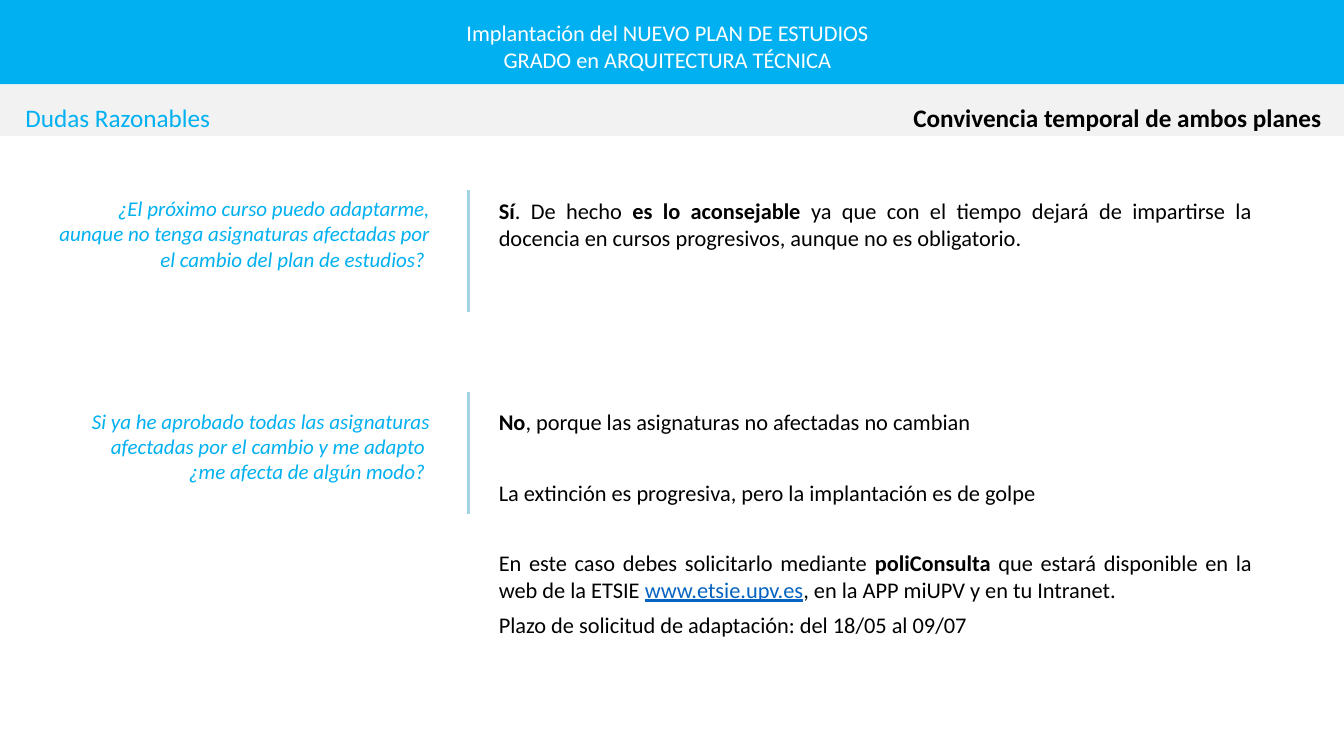
"""Build the slide on the period when both study plans run side by side."""
from dataclasses import dataclass

from lxml.etree import SubElement
from pptx import Presentation
from pptx.dml.color import RGBColor as Rgb
from pptx.enum.shapes import MSO_CONNECTOR as Connector, MSO_SHAPE as Preset
from pptx.enum.text import MSO_ANCHOR as Anchor, MSO_AUTO_SIZE as AutoSize, PP_ALIGN as Align
from pptx.oxml.ns import qn
from pptx.util import Cm, Pt


@dataclass(frozen=True)
class Theme:
    font: str = "Calibri"
    blue: Rgb = Rgb(0x00, 0xB0, 0xF0)
    pale_blue: Rgb = Rgb(0xA4, 0xD3, 0xE6)
    grey: Rgb = Rgb(0xF2, 0xF2, 0xF2)
    link: Rgb = Rgb(0x05, 0x63, 0xC1)
    black: Rgb = Rgb(0x00, 0x00, 0x00)
    white: Rgb = Rgb(0xFF, 0xFF, 0xFF)
    heading: Pt = Pt(18)
    text: Pt = Pt(16)
    question: Pt = Pt(15)


theme = Theme()


def place(shape, left, top, width, height, inset):
    """Move a text shape and give its frame fixed margins, in centimetres."""
    for name, value in dict(left=left, top=top, width=width, height=height).items():
        setattr(shape, name, Cm(value))
    frame_format = dict(
        word_wrap=True, auto_size=AutoSize.NONE, vertical_anchor=Anchor.TOP,
        margin_left=Cm(inset), margin_right=Cm(inset),
        margin_top=Cm(0.13), margin_bottom=Cm(0.13),
    )
    for name, value in frame_format.items():
        setattr(shape.text_frame, name, value)


def write(shape, paragraphs, align, size, color, **style):
    """Write (space after, runs) paragraphs, each run being (text, format)."""
    frame = shape.text_frame
    for number, (space_after, runs) in enumerate(paragraphs):
        paragraph = frame.add_paragraph() if number else frame.paragraphs[0]
        properties = paragraph._p.get_or_add_pPr()
        properties.set("marL", "0")
        properties.set("indent", "0")
        SubElement(properties, qn("a:buNone"))
        layout = dict(alignment=align, space_before=Pt(0), space_after=Pt(space_after))
        for name, value in layout.items():
            setattr(paragraph, name, value)
        for text, emphasis in runs:
            run = paragraph.add_run()
            run.text = text
            run_format = dict(name=theme.font, size=size, bold=False) | style | emphasis
            run.font.color.rgb = run_format.pop("color", color)
            for name, value in run_format.items():
                setattr(run.font, name, value)


presentation = Presentation()
presentation.slide_width = Cm(33.87)
presentation.slide_height = Cm(19.05)
slide = presentation.slides.add_slide(presentation.slide_layouts[4])
shapes = slide.shapes
holders = slide.placeholders

bands = [(0, 2.13, theme.blue), (2.13, 1.3, theme.grey)]
for depth, (top, height, color) in enumerate(bands, start=2):
    band = shapes.add_shape(Preset.RECTANGLE, 0, Cm(top), presentation.slide_width, Cm(height))
    band.shadow.inherit = False
    band.fill.solid()
    band.fill.fore_color.rgb = color
    band.line.fill.background()
    band.element.getparent().insert(depth, band.element)

topic = shapes.title
place(topic, 16.64, 2.46, 16.94, 1.02, 0.13)
write(topic, [(0, [("Convivencia temporal de ambos planes ", {})])],
      Align.RIGHT, theme.heading, theme.black, bold=True)

section = shapes.add_textbox(0, 0, 0, 0)
place(section, 0.51, 2.46, 6.68, 1.02, 0.13)
write(section, [(0, [("Dudas Razonables", {})])], Align.LEFT, theme.heading, theme.blue)

programme = shapes.add_textbox(0, 0, 0, 0)
place(programme, 5.99, 0.36, 21.79, 1.63, 0.13)
write(programme, [
    (0, [("Implantación del NUEVO PLAN DE ESTUDIOS ", {})]),
    (0, [("GRADO en ARQUITECTURA TÉCNICA ", {})]),
], Align.CENTER, theme.text, theme.white)

strong = dict(bold=True)
web = dict(color=theme.link, underline=True)
doubts = [
    dict(
        question_top=4.8, answer_top=4.83, answer_height=2.51, rule_top=4.8,
        question=["¿El próximo curso puedo adaptarme, aunque no tenga asignaturas "
                  "afectadas por el cambio del plan de estudios? "],
        answer=[(6, [
            ("Sí", strong), (". De hecho ", {}), ("es lo aconsejable ", strong),
            ("ya que con el tiempo dejará de impartirse la docencia en cursos "
             "progresivos, aunque no es obligatorio.", {}),
        ])],
    ),
    dict(
        question_top=10.16, answer_top=10.16, answer_height=7.01, rule_top=9.88,
        question=["Si ya he aprobado todas las asignaturas afectadas por el cambio "
                  "y me adapto ", "¿me afecta de algún modo? "],
        answer=[
            (31, [("No", strong), (", porque las asignaturas no afectadas no cambian", {})]),
            (31, [("La extinción es progresiva, pero la implantación es de golpe", {})]),
            (6, [
                ("En este caso debes solicitarlo mediante ", {}), ("poliConsulta ", strong),
                ("que estará disponible en la web de la ETSIE ", {}),
                ("www.etsie.upv.es", web), (", en la APP miUPV y en tu Intranet.", {}),
            ]),
            (6, [("Plazo de solicitud de adaptación: del 18/05 al 09/07", {})]),
        ],
    ),
]

for number, doubt in enumerate(doubts):
    question, answer = holders[2 * number + 1], holders[2 * number + 2]
    place(question, 1.02, doubt["question_top"], 10.06, 2.18, 0.25)
    write(question, [(0, [(text, {})]) for text in doubt["question"]],
          Align.RIGHT, theme.question, theme.blue, italic=True)
    place(answer, 12.32, doubt["answer_top"], 19.48, doubt["answer_height"], 0.25)
    write(answer, doubt["answer"], Align.JUSTIFY, theme.text, theme.black)

    rule_top = doubt["rule_top"]
    rule = shapes.add_connector(Connector.STRAIGHT, Cm(11.81), Cm(rule_top + 3.07),
                                Cm(11.81), Cm(rule_top))
    rule.line.color.rgb = theme.pale_blue
    rule.line.width = Pt(2.25)
    SubElement(rule.element.spPr, qn("a:effectLst"))

presentation.save("out.pptx")
